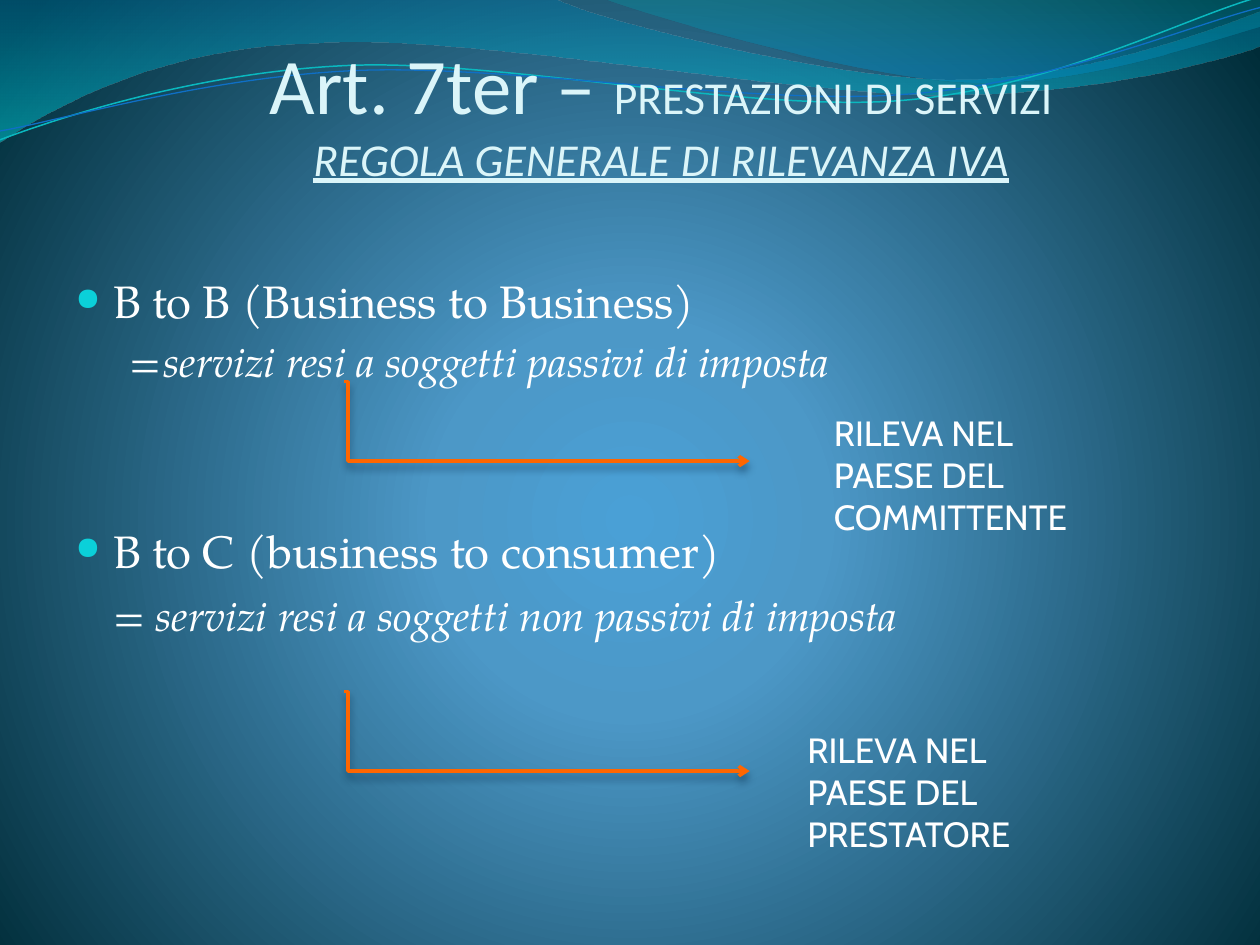
from dataclasses import dataclass

from lxml.etree import SubElement
from pptx import Presentation
from pptx.dml.color import RGBColor
from pptx.enum.shapes import MSO_CONNECTOR
from pptx.enum.text import MSO_ANCHOR, PP_ALIGN
from pptx.oxml.ns import qn
from pptx.util import Inches, Pt


@dataclass(frozen=True)
class Theme:
    title_font: str = "Calibri"
    body_font: str = "TeX Gyre Pagella"
    note_font: str = "Cabin"
    title: str = "DBF5F9"
    text: str = "FFFFFF"
    bullet: str = "0BD0D9"
    arrow: str = "FF6600"
    shadow: str = "042747"
    title_size: float = 45
    subtitle_size: float = 26.1
    body_size: float = 26
    detail_size: float = 24
    note_size: float = 20
    # gradient stops: position %, colour, opacity %
    background: tuple = ((0, "4AA0D6", 100), (25, "4C98C7", 100), (100, "002C38", 100))
    wide_wave: tuple = ((0, "0074A1", 45), (100, "00C6CF", 55))
    right_wave: tuple = ((0, "00A1A9", 30), (80, "008BBF", 45))
    upper_line: str = "0AB8BF"
    lower_line: str = "0F6FC6"


THEME = Theme()

# Outlines in inches: a start point, then lines (x, y) or cubic curves (six numbers)
WIDE_WAVE = [
    (0, 0), (4.4, -0.01), (4.76, 0.17, 6.64, 0.63, 7.58, 0.63),
    (8.53, 0.63, 9.58, 0.26, 10, 0.09), (10.01, 0.36),
    (9.83, 0.44, 8.7, 0.76, 7.46, 0.75), (6.22, 0.75, 3.82, 0.28, 2.57, 0.34),
    (1.29, 0.36, 0.46, 0.83, -0.01, 1.13)]
RIGHT_WAVE = [
    (4.79, -0.01), (5.09, 0.11, 6.82, 0.62, 7.69, 0.65),
    (8.56, 0.69, 9.61, 0.32, 10, 0.21), (10, 0)]
UPPER_LINE = [
    (0, 1.11), (0.48, 0.93, 1.58, 0.57, 2.77, 0.52),
    (3.95, 0.47, 5.93, 0.89, 7.13, 0.8), (8.33, 0.71, 9.38, 0.15, 9.98, -0.02)]
LOWER_LINE = [
    (0, 1.04), (0.47, 0.96, 1.64, 0.61, 2.83, 0.56),
    (4.03, 0.51, 5.97, 0.84, 7.17, 0.75), (8.36, 0.67, 9.41, 0.21, 10, 0.06)]


def set_attrs(obj, values):
    for name, value in values.items():
        setattr(obj, name, value)


def add_xml(parent, tag, **attrs):
    return SubElement(parent, qn(tag), {k: str(v) for k, v in attrs.items()})


def add_color(parent, color, opacity):
    clr = add_xml(parent, "a:srgbClr", val=color)
    if opacity < 100:
        add_xml(clr, "a:alpha", val=opacity * 1000)


def set_gradient(grad, stops, radial=False):
    """Rewrite a gradFill element with the given stops, top-down or radial."""
    for child in list(grad):
        grad.remove(child)
    gs_lst = add_xml(grad, "a:gsLst")
    for pos, color, opacity in stops:
        add_color(add_xml(gs_lst, "a:gs", pos=pos * 1000), color, opacity)
    if radial:
        path = add_xml(grad, "a:path", path="circle")
        add_xml(path, "a:fillToRect", l=10000, t=110000, r=10000, b=100000)
    else:
        add_xml(grad, "a:lin", ang=5400000, scaled=1)


def add_outline(slide, outline, close):
    """Draw straight lines between the knots, then bend those that are curves."""
    start, *knots = [tuple(map(Inches, seg[-2:])) for seg in outline]
    builder = slide.shapes.build_freeform(*start)
    builder.add_line_segments(knots, close=close)
    sp = builder.convert_to_shape()
    sp.shadow.inherit = False
    lines = list(sp._element.iter(qn("a:lnTo")))
    for line, seg in zip(lines, outline[1:]):
        if len(seg) == 6:
            line.tag = qn("a:cubicBezTo")
            line.remove(line[0])
            for x, y in zip(seg[::2], seg[1::2]):
                add_xml(line, "a:pt", x=Inches(x) - sp.left, y=Inches(y) - sp.top)
    return sp


def add_backdrop(slide):
    slide.background.fill.gradient()
    set_gradient(slide._element.find(".//" + qn("a:gradFill")), THEME.background, radial=True)
    for outline, stops in ((WIDE_WAVE, THEME.wide_wave), (RIGHT_WAVE, THEME.right_wave)):
        sp = add_outline(slide, outline, close=True)
        sp.line.fill.background()
        sp.fill.gradient()
        set_gradient(sp._element.spPr.find(qn("a:gradFill")), stops)
    for outline, color, width in ((UPPER_LINE, THEME.upper_line, 0.85),
                                  (LOWER_LINE, THEME.lower_line, 0.75)):
        sp = add_outline(slide, outline, close=False)
        sp.fill.background()
        sp.line.color.rgb = RGBColor.from_string(color)
        sp.line.width = Pt(width)


def add_frame(slide, box, **values):
    tf = slide.shapes.add_textbox(*map(Inches, box)).text_frame
    set_attrs(tf, {"word_wrap": True, **values})
    return tf


def add_run(p, text, font, size, color, **values):
    r = p.add_run()
    r.text = text
    set_attrs(r.font, {"name": font, "size": Pt(size), **values})
    r.font.color.rgb = RGBColor.from_string(color)


def add_title(slide, box):
    tf = add_frame(slide, box, vertical_anchor=MSO_ANCHOR.BOTTOM, margin_bottom=Inches(0.48))
    p = tf.paragraphs[0]
    p.alignment = PP_ALIGN.CENTER
    style = THEME.title_font, THEME.subtitle_size, THEME.title
    add_run(p, "Art. 7ter – ", THEME.title_font, THEME.title_size, THEME.title)
    add_run(p, "PRESTAZIONI DI SERVIZI", *style)
    p.add_line_break()
    add_run(p, "REGOLA GENERALE DI RILEVANZA IVA", *style, italic=True, underline=True)


def add_body(slide, box):
    tf = add_frame(slide, box)
    # text, is a heading, left margin, first-line indent, space before
    rows = [
        ("B to B (Business to Business)", True, 0.3, -0.3, 5.2),
        ("=\tservizi resi a soggetti passivi di imposta", False, 0.7, -0.27, 4.4),
        ("B to C (business to consumer)", True, 0.3, -0.3, 78.4),
        ("= servizi resi a soggetti non passivi di imposta", False, 0.3, 0, 7),
    ]
    for i, (text, heading, margin, indent, before) in enumerate(rows):
        p = tf.add_paragraph() if i else tf.paragraphs[0]
        p.space_before = Pt(before)
        pPr = p._p.get_or_add_pPr()
        pPr.set("marL", str(Inches(margin)))
        pPr.set("indent", str(Inches(indent)))
        if heading:
            add_color(add_xml(pPr, "a:buClr"), THEME.bullet, 100)
            add_xml(pPr, "a:buSzPct", val=70000)
            add_xml(pPr, "a:buChar", char="●")
        size = THEME.body_size if heading else THEME.detail_size
        add_run(p, text, THEME.body_font, size, THEME.text, italic=not heading)


def add_elbow_arrow(slide, box):
    x, y, w, h = map(Inches, box)
    cxn = slide.shapes.add_connector(MSO_CONNECTOR.ELBOW, x, y, x + w, y + h)
    cxn.line.color.rgb = RGBColor.from_string(THEME.arrow)
    cxn.line.width = Pt(2)
    spPr = cxn._element.spPr
    add_xml(spPr.find(qn("a:prstGeom")).get_or_add_avLst(), "a:gd",
            name="adj1", fmla="val 1000")
    add_xml(spPr.find(qn("a:ln")), "a:tailEnd", type="arrow")
    shadow = add_xml(add_xml(spPr, "a:effectLst"), "a:outerShdw", blurRad=Pt(4.5),
                     dist=Pt(3), dir=5400000, rotWithShape=0)
    add_color(shadow, THEME.shadow, 48)


def add_note(slide, box, text):
    p = add_frame(slide, box).paragraphs[0]
    add_run(p, text, THEME.note_font, THEME.note_size, THEME.text)


def main():
    prs = Presentation()
    prs.slide_width, prs.slide_height = Inches(10), Inches(7.5)
    slide = prs.slides.add_slide(prs.slide_layouts[6])
    add_backdrop(slide)
    add_title(slide, (1, 0.56, 8.5, 1.39))
    add_body(slide, (0.5, 2.12, 9, 4.8))
    for arrow_top, note_left, note_top, text in (
            (3.03, 6.52, 3.22, "RILEVA NEL PAESE DEL COMMITTENTE"),
            (5.49, 6.31, 5.73, "RILEVA NEL PAESE DEL PRESTATORE")):
        add_elbow_arrow(slide, (2.73, arrow_top, 3.22, 0.63))
        add_note(slide, (note_left, note_top, 2.1, 1.11), text)
    prs.save("out.pptx")


if __name__ == "__main__":
    main()
